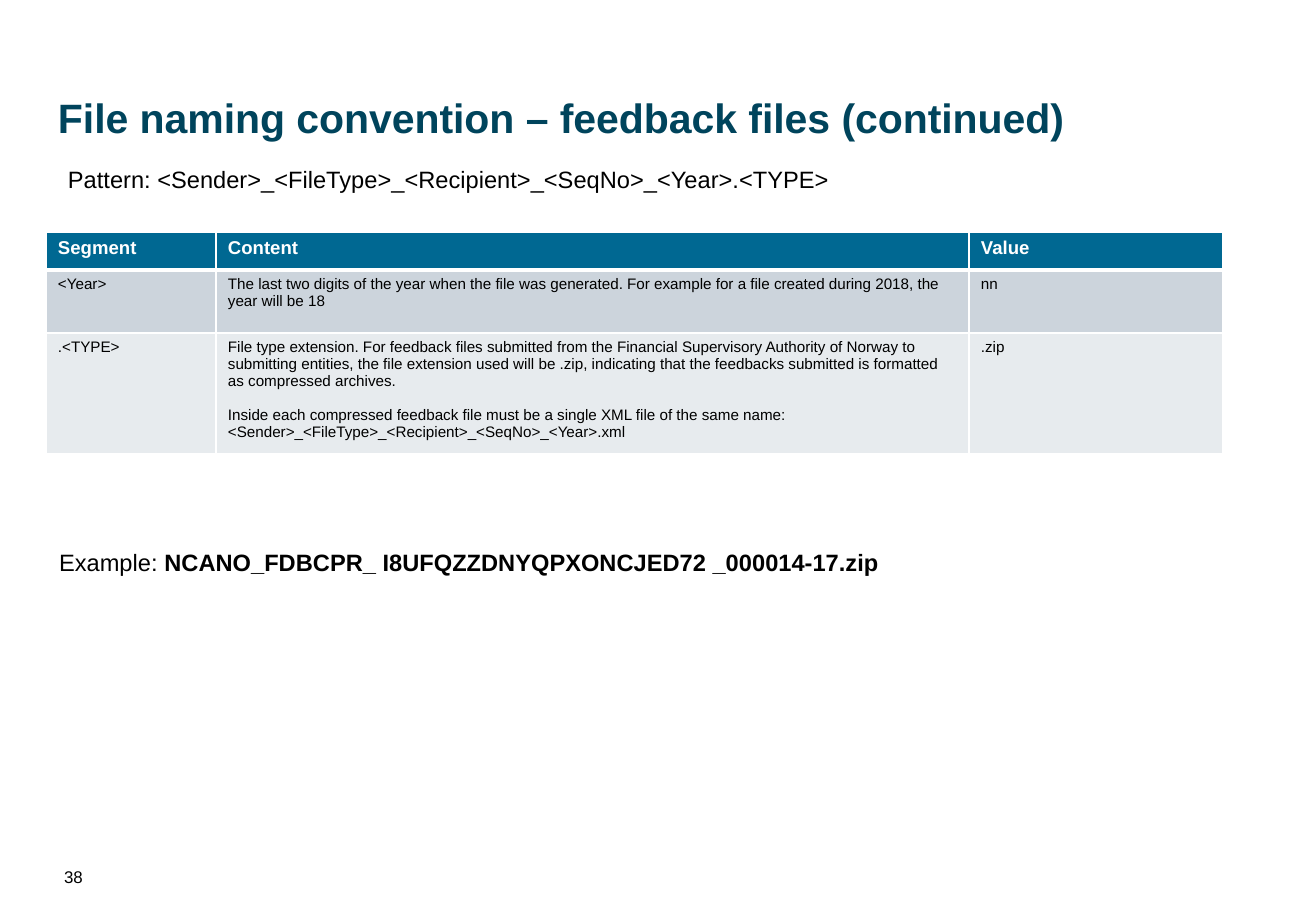
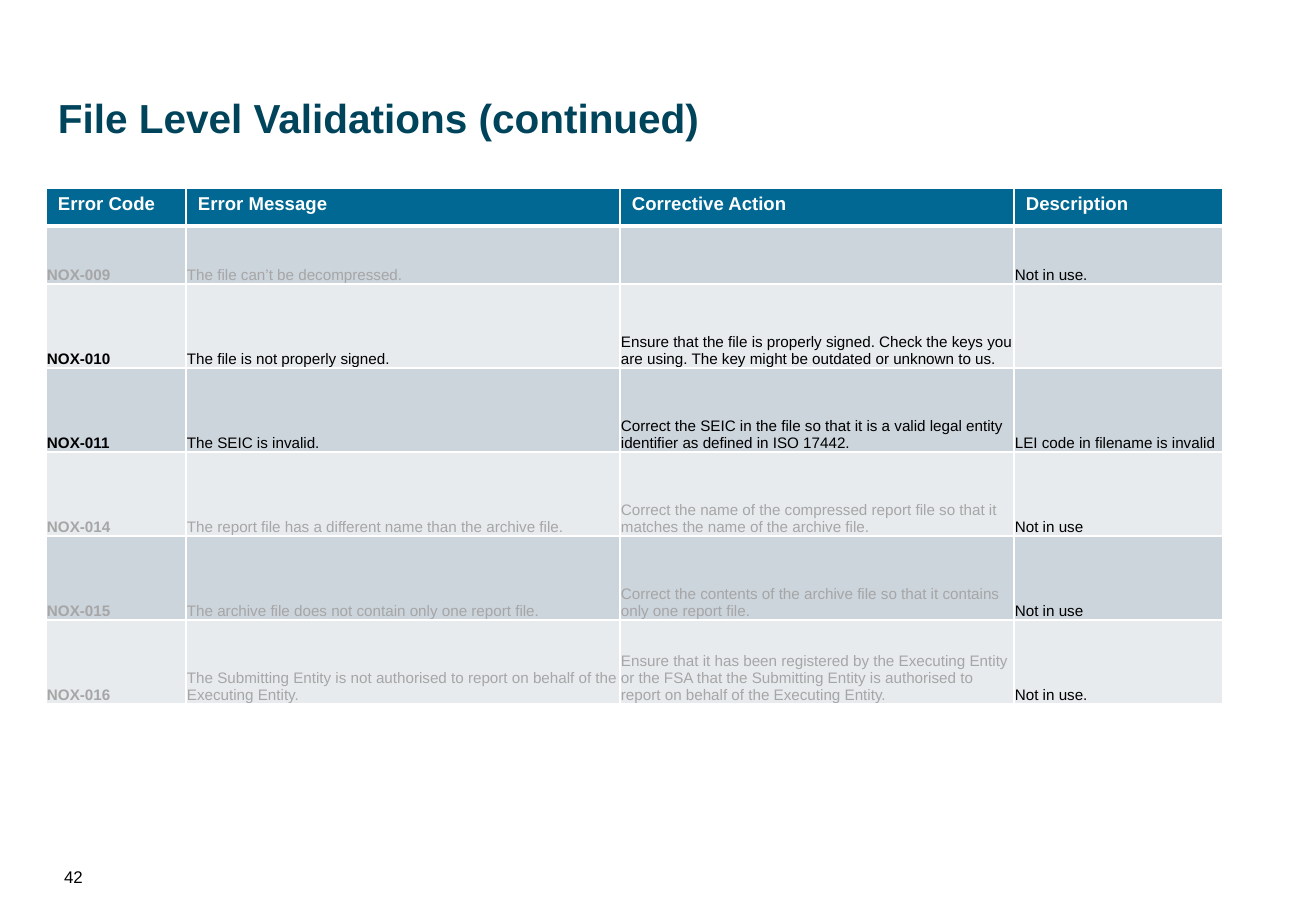
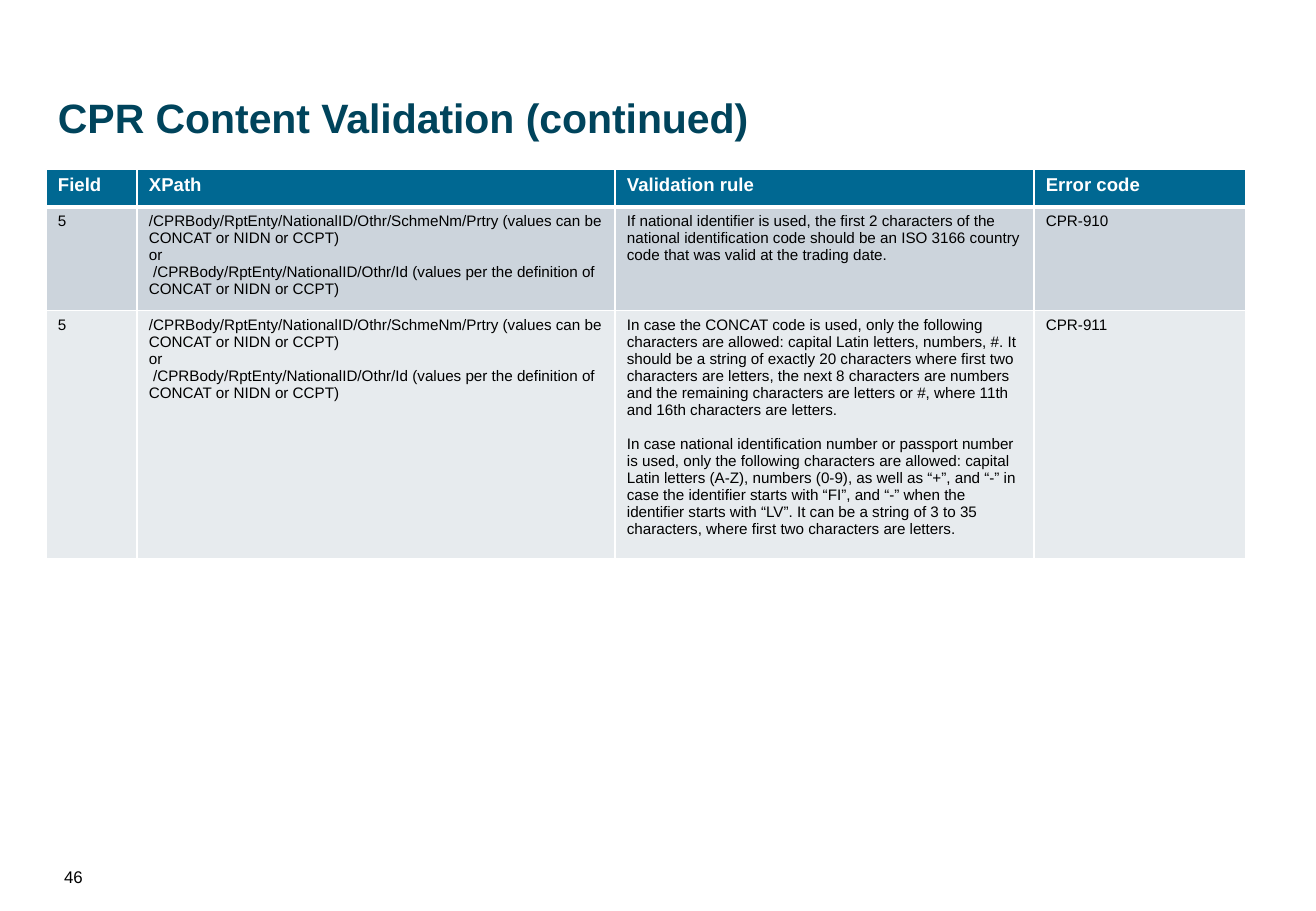
from pptx import Presentation
from pptx.dml.color import RGBColor
from pptx.enum.text import MSO_ANCHOR as Anchor
from pptx.oxml import parse_xml
from pptx.oxml.ns import nsdecls
from pptx.util import Pt

PX = 7526  # EMU in one px (121.5 px to the inch)
WIDTH, HEIGHT = 1316, 911
LEFT = 46  # shared edge of titles and tables

TITLE_COLOR = RGBColor(0x00, 0x44, 0x5C)
HEADER_FILL = RGBColor(0x00, 0x68, 0x92)
BAND_FILLS = (RGBColor(0xCC, 0xD4, 0xDC), RGBColor(0xE7, 0xEB, 0xEE))
WHITE = RGBColor(0xFF, 0xFF, 0xFF)
BLACK = RGBColor(0x00, 0x00, 0x00)
GRAY = RGBColor(0xA6, 0xA6, 0xA6)

HEADER_HEIGHT = 38
HEADER_FORMAT = {"size": Pt(11), "bold": True, "color": WHITE}
BODY_FORMAT = {"size": Pt(9), "bold": False, "color": BLACK}
LINE_FORMAT = {"size": Pt(14), "bold": False, "color": BLACK}
NUMBER_FORMAT = {"size": Pt(10), "bold": False, "color": BLACK}
NORMAL_INSETS = (12, 6, 12, 6)  # left, top, right, bottom
TIGHT_INSETS = (1, 1, 1, 0)
BLOCK_GAP = Pt(10)

# Slide content
ERROR_ROWS = [
    ("NOX-009", "The file can’t be decompressed.", "", "Not in use."),
    ("NOX-010", "The file is not properly signed.",
     "Ensure that the file is properly signed. Check the keys you are using. "
     "The key might be outdated or unknown to us.", ""),
    ("NOX-011", "The SEIC is invalid.",
     "Correct the SEIC in the file so that it is a valid legal entity identifier "
     "as defined in ISO 17442.", "LEI code in filename is invalid"),
    ("NOX-014", "The report file has a different name than the archive file.",
     "Correct the name of the compressed report file so that it matches the name "
     "of the archive file.", "Not in use"),
    ("NOX-015", "The archive file does not contain only one report file.",
     "Correct the contents of the archive file so that it contains only one "
     "report file.", "Not in use"),
    ("NOX-016", "The Submitting Entity is not authorised to report on behalf of the "
     "Executing Entity.",
     "Ensure that it has been registered by the Executing Entity or the FSA that "
     "the Submitting Entity is authorised to report on behalf of the Executing "
     "Entity.", "Not in use."),
]

SEGMENT_ROWS = [
    ("<Year>", "The last two digits of the year when the file was generated. For "
     "example for a file created during 2018, the year will be 18", "nn"),
    (".<TYPE>", "File type extension. For feedback files submitted from the Financial "
     "Supervisory Authority of Norway to submitting entities, the file extension "
     "used will be .zip, indicating that the feedbacks submitted is formatted as "
     "compressed archives.\n\n"
     "Inside each compressed feedback file must be a single XML file of the same "
     "name: <Sender>_<FileType>_<Recipient>_<SeqNo>_<Year>.xml", ".zip"),
]

ENTITY_XPATH = (
    "/CPRBody/RptEnty/NationalID/Othr/SchmeNm/Prtry (values can be CONCAT or NIDN "
    "or CCPT)\nor\n"
    " /CPRBody/RptEnty/NationalID/Othr/Id (values per the definition of CONCAT or "
    "NIDN or CCPT)")
RULE_ROWS = [
    ("5", ENTITY_XPATH,
     "If national identifier is used, the first 2 characters of the national "
     "identification code should be an ISO 3166 country code that was valid at the "
     "trading date.", "CPR-910"),
    ("5", ENTITY_XPATH,
     "In case the CONCAT code is used, only the following characters are allowed: "
     "capital Latin letters, numbers, #. It should be a string of exactly 20 "
     "characters where first two characters are letters, the next 8 characters are "
     "numbers and the remaining characters are letters or #, where 11th and 16th "
     "characters are letters.\n\n"
     "In case national identification number or passport number is used, only the "
     "following characters are allowed: capital Latin letters (A-Z), numbers (0-9), "
     "as well as “+”, and “-” in case the identifier starts with “FI”, and “-” when "
     "the identifier starts with “LV”. It can be a string of 3 to 35 characters, "
     "where first two characters are letters.", "CPR-911"),
]


def add_span(para, text, format_values):
    span = para.add_run()
    span.text = text
    span.font.name = "Arial"
    for name, value in format_values.items():
        if name == "color":
            span.font.color.rgb = value
        else:
            setattr(span.font, name, value)


def set_insets(target, insets):
    for side, inset in zip(("left", "top", "right", "bottom"), insets):
        setattr(target, f"margin_{side}", inset * PX)


def add_text(slide, area, spans, insets=NORMAL_INSETS):
    """Place one paragraph made of (text, format) spans."""
    box = slide.shapes.add_textbox(*(length * PX for length in area))
    frame = box.text_frame
    frame.word_wrap = True
    set_insets(frame, insets)
    for text, format_values in spans:
        add_span(frame.paragraphs[0], text, format_values)


def set_borders(cell, top, bottom):
    """Draw white borders; top and bottom widths are in points."""
    properties = cell._tc.get_or_add_tcPr()
    widths = {"lnL": 1, "lnR": 1, "lnT": top, "lnB": bottom}
    for index, (tag, width) in enumerate(widths.items()):
        properties.insert(index, parse_xml(
            f'<a:{tag} {nsdecls("a")} w="{Pt(width)}"><a:solidFill>'
            f'<a:srgbClr val="{WHITE}"/></a:solidFill></a:{tag}>'))


def fill_cell(cell, text, format_values, fill, insets, anchor):
    """Single breaks start paragraphs, double breaks leave a gap."""
    cell.fill.solid()
    cell.fill.fore_color.rgb = fill
    cell.vertical_anchor = anchor
    set_insets(cell, insets)
    if not text:
        return
    para = None
    for block in text.split("\n\n"):
        for position, line in enumerate(block.split("\n")):
            if para is None:
                para = cell.text_frame.paragraphs[0]
            else:
                para = cell.text_frame.add_paragraph()
                para.space_before = Pt(0) if position else BLOCK_GAP
            add_span(para, line, format_values)


def body_format(row, column):
    return BODY_FORMAT


def error_format(row, column):
    """Bold codes; rows not in use are gray up to the description."""
    unused = row[-1].startswith("Not in use")
    color = GRAY if unused and column < len(row) - 1 else BLACK
    return {**BODY_FORMAT, "bold": column == 0, "color": color}


def add_banded_table(slide, top, widths, heights, header, rows,
                     format_cell=body_format, insets=NORMAL_INSETS, anchor=Anchor.TOP):
    heights = [HEADER_HEIGHT, *heights]
    frame = slide.shapes.add_table(len(heights), len(widths), LEFT * PX, top * PX,
                                   sum(widths) * PX, sum(heights) * PX)
    table = frame.table
    table.horz_banding = False
    for column, width in zip(table.columns, widths):
        column.width = width * PX
    for row, height in zip(table.rows, heights):
        row.height = height * PX

    # Header row
    for column, text in enumerate(header):
        cell = table.cell(0, column)
        fill_cell(cell, text, HEADER_FORMAT, HEADER_FILL, NORMAL_INSETS, Anchor.TOP)
        set_borders(cell, 1, 3)

    # Body rows
    for index, row in enumerate(rows):
        for column, text in enumerate(row):
            cell = table.cell(index + 1, column)
            fill_cell(cell, text, format_cell(row, column), BAND_FILLS[index % 2],
                      insets if text else NORMAL_INSETS, anchor)
            set_borders(cell, 1 if index else 3, 1)


def add_page(deck, title, number, title_size=24.3):
    """Add a blank slide with its title and page number."""
    slide = deck.slides.add_slide(deck.slide_layouts[6])
    title_format = {"size": Pt(title_size), "bold": True, "color": TITLE_COLOR}
    add_text(slide, (LEFT, 83, 1159, 76), [(title, title_format)], (12, 10, 12, 6))
    add_text(slide, (64, 867, 96, 21), [(number, NUMBER_FORMAT)], (0, 0, 0, 0))
    return slide


def main():
    deck = Presentation()
    deck.slide_width, deck.slide_height = WIDTH * PX, HEIGHT * PX

    # File naming
    page = add_page(deck, "File naming convention – feedback files (continued)", "38")
    add_banded_table(page, 232, (170, 753, 254), (63, 114),
                     ("Segment", "Content", "Value"), SEGMENT_ROWS)
    add_text(page, (56, 159, 1177, 74), [
        ("Pattern: <Sender>_<FileType>_<Recipient>_<SeqNo>_<Year>.<TYPE>", LINE_FORMAT)])
    add_text(page, (47, 542, 1079, 41), [
        ("Example: ", LINE_FORMAT),
        ("NCANO_FDBCPR_ I8UFQZZDNYQPXONCJED72 _000014-17.zip",
         {**LINE_FORMAT, "bold": True})])

    # File level errors
    page = add_page(deck, "File Level Validations (continued)", "42", title_size=24)
    add_banded_table(page, 188, (140, 434, 394, 209), [58] + [84] * 5,
                     ("Error Code", "Error Message", "Corrective Action", "Description"),
                     ERROR_ROWS, error_format, TIGHT_INSETS, Anchor.BOTTOM)

    # Content rules
    page = add_page(deck, "CPR Content Validation (continued)", "46")
    add_banded_table(page, 169, (91, 478, 419, 212), (97, 233),
                     ("Field", "XPath", "Validation rule", "Error code"), RULE_ROWS)

    deck.save("out.pptx")


if __name__ == "__main__":
    main()
